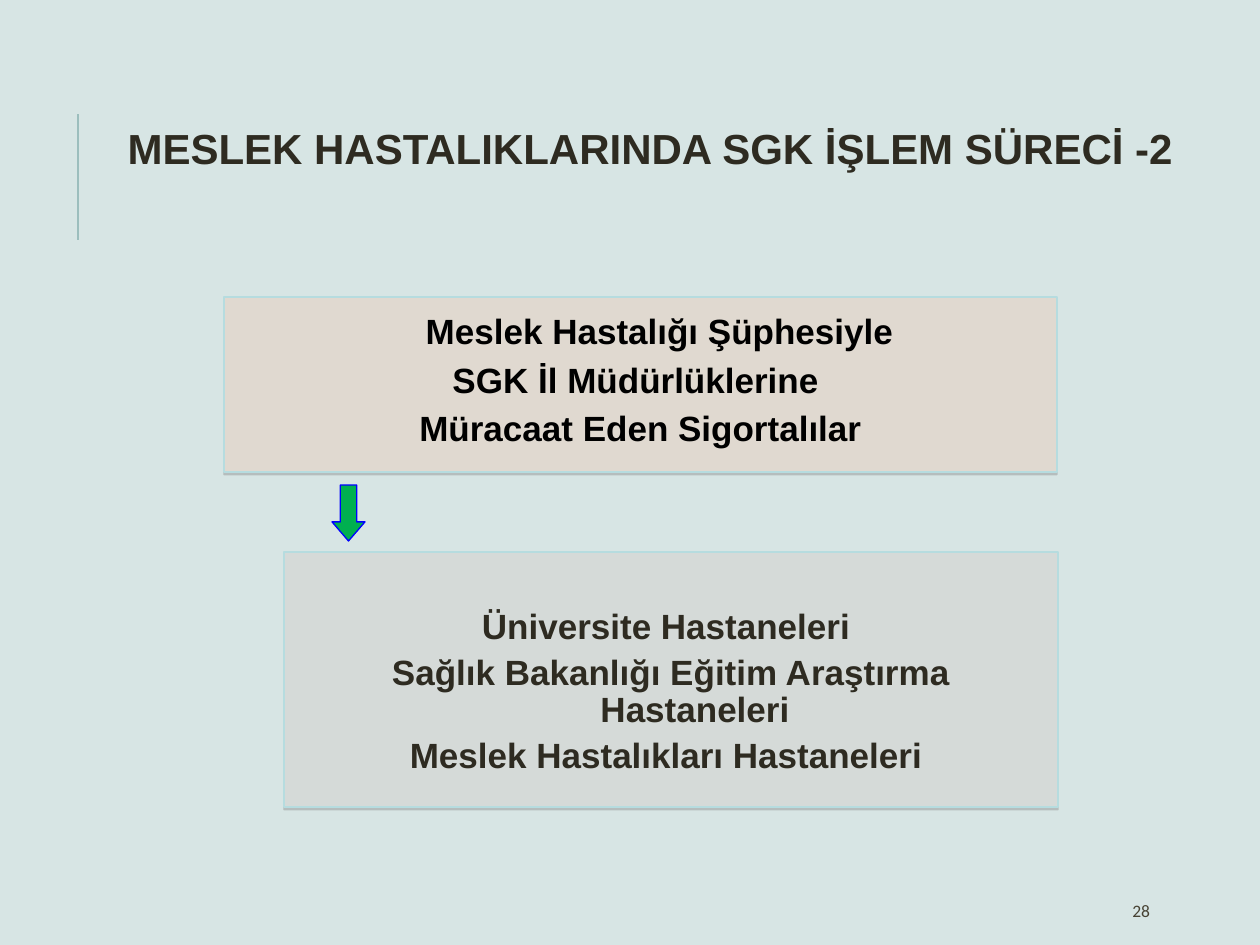
from dataclasses import dataclass

from lxml import etree
from pptx import Presentation
from pptx.dml.color import RGBColor
from pptx.enum.shapes import MSO_CONNECTOR, MSO_SHAPE
from pptx.enum.text import MSO_ANCHOR, MSO_AUTO_SIZE, PP_ALIGN
from pptx.oxml.ns import qn
from pptx.util import Emu, Pt

RECTANGLE, DOWN_ARROW = MSO_SHAPE.RECTANGLE, MSO_SHAPE.DOWN_ARROW
STRAIGHT = MSO_CONNECTOR.STRAIGHT
TOP, MIDDLE = MSO_ANCHOR.TOP, MSO_ANCHOR.MIDDLE
LEFT, CENTER = PP_ALIGN.LEFT, PP_ALIGN.CENTER
NO_AUTOFIT = MSO_AUTO_SIZE.NONE
PX_PER_INCH = 126
TITLE_ONLY = 5


@dataclass(frozen=True)
class Theme:
    background: str = "D7E5E4"
    accent: str = "9CBEBD"
    applicants: str = "E0D9D0"
    hospitals: str = "D5DAD8"
    border: str = "B6DCDF"
    shadow: str = "808080"
    arrow: str = "00B050"
    arrow_border: str = "0000FF"
    ink: str = "2E2B21"
    black: str = "000000"
    number: str = "474233"
    heading_font: str = "Arial"
    number_font: str = "Calibri"
    title_size: int = 24
    body_size: int = 20
    number_size: int = 10


THEME = Theme()


def px(length):
    return Emu(round(length * 914400 / PX_PER_INCH))


def rgb(value):
    return RGBColor.from_string(value)


def set_format(target, **values):
    for attribute, value in values.items():
        setattr(target, attribute, value)


def style_font(font, name, size, color, bold=False):
    set_format(font, name=name, size=Pt(size), bold=bold)
    font.color.rgb = rgb(color)


def place(item, box):
    left, top, width, height = map(px, box)
    set_format(item, left=left, top=top, width=width, height=height)


def add_filled_shape(slide, kind, box, fill, border):
    shape = slide.shapes.add_shape(kind, *map(px, box))
    shape.shadow.inherit = False
    shape.fill.solid()
    shape.fill.fore_color.rgb = rgb(fill)
    shape.line.color.rgb = rgb(border)
    shape.line.width = Pt(0.75)
    return shape


def add_drop_shadow(shape):
    """Put a sharp shadow straight below the shape."""
    effects = shape._element.spPr.find(qn("a:effectLst"))
    shadow = etree.SubElement(effects, qn("a:outerShdw"), blurRad="0",
                              dist=str(Pt(1.6)), dir="5400000", rotWithShape="0")
    color = etree.SubElement(shadow, qn("a:srgbClr"), val=THEME.shadow)
    etree.SubElement(color, qn("a:alpha"), val="38000")


def add_title(slide, box, text):
    title = slide.shapes.title
    place(title, box)
    frame = title.text_frame
    frame.text = text
    set_format(frame, word_wrap=False, auto_size=NO_AUTOFIT, vertical_anchor=TOP)
    paragraph = frame.paragraphs[0]
    paragraph.alignment = LEFT
    style_font(paragraph.runs[0].font, THEME.heading_font, THEME.title_size,
               THEME.ink, bold=True)


def add_accent_rule(slide, x, top, bottom):
    rule = slide.shapes.add_connector(STRAIGHT, px(x), px(bottom), px(x), px(top))
    rule.line.color.rgb = rgb(THEME.accent)
    rule.line.width = Pt(1.5)
    etree.SubElement(rule._element.spPr, qn("a:effectLst"))


def add_step(slide, box, fill, color, lines, inset_top, line_spacing, lead=""):
    """Add a process box; lead is a larger run that opens the first line."""
    step = add_filled_shape(slide, RECTANGLE, box, fill, THEME.border)
    add_drop_shadow(step)
    frame = step.text_frame
    set_format(frame, word_wrap=True, vertical_anchor=TOP, margin_top=px(inset_top))
    for index, line in enumerate(lines):
        paragraph = frame.add_paragraph() if index else frame.paragraphs[0]
        set_format(paragraph, alignment=CENTER, line_spacing=line_spacing,
                   space_before=Pt(4.6 if index else 0))
        paragraph._p.get_or_add_pPr().set("marL", str(px(48)))
        paragraph._p.get_or_add_pPr().set("indent", str(-px(48)))
        if lead and not index:
            opening = paragraph.add_run()
            opening.text = lead
            style_font(opening.font, THEME.heading_font, THEME.title_size, color)
        run = paragraph.add_run()
        run.text = line
        style_font(run.font, THEME.heading_font, THEME.body_size, color, bold=True)


def add_step_arrow(slide, box):
    arrow = add_filled_shape(slide, DOWN_ARROW, box, THEME.arrow, THEME.arrow_border)
    arrow.adjustments[0] = 0.5
    arrow.adjustments[1] = 0.58


def add_slide_number(slide, box, number):
    frame = slide.shapes.add_textbox(*map(px, box)).text_frame
    set_format(frame, word_wrap=True, vertical_anchor=MIDDLE)
    run = frame.paragraphs[0].add_run()
    run.text = number
    style_font(run.font, THEME.number_font, THEME.number_size, THEME.number)


def build_process_slide(presentation):
    slide = presentation.slides.add_slide(presentation.slide_layouts[TITLE_ONLY])
    slide.background.fill.solid()
    slide.background.fill.fore_color.rgb = rgb(THEME.background)
    add_accent_rule(slide, 78, 114, 240)
    add_step_arrow(slide, (332, 485, 33, 56))
    add_step(slide, (224, 297, 833, 175), THEME.applicants, THEME.black,
             ["Meslek Hastalığı Şüphesiyle ", "SGK İl Müdürlüklerine ",
              "Müracaat Eden Sigortalılar"],
             inset_top=9, line_spacing=0.95, lead="\t")
    add_step(slide, (284, 552, 774, 255), THEME.hospitals, THEME.ink,
             ["Üniversite Hastaneleri ",
              "Sağlık Bakanlığı Eğitim Araştırma Hastaneleri",
              "Meslek Hastalıkları Hastaneleri "],
             inset_top=57, line_spacing=0.9)
    add_slide_number(slide, (1120, 892, 101, 38), "28")
    add_title(slide, (115, 116, 1071, 63),
              "MESLEK HASTALIKLARINDA SGK İŞLEM SÜRECİ -2")


def main():
    presentation = Presentation()
    set_format(presentation, slide_width=px(1260), slide_height=px(945))
    build_process_slide(presentation)
    presentation.save("out.pptx")


if __name__ == "__main__":
    main()
